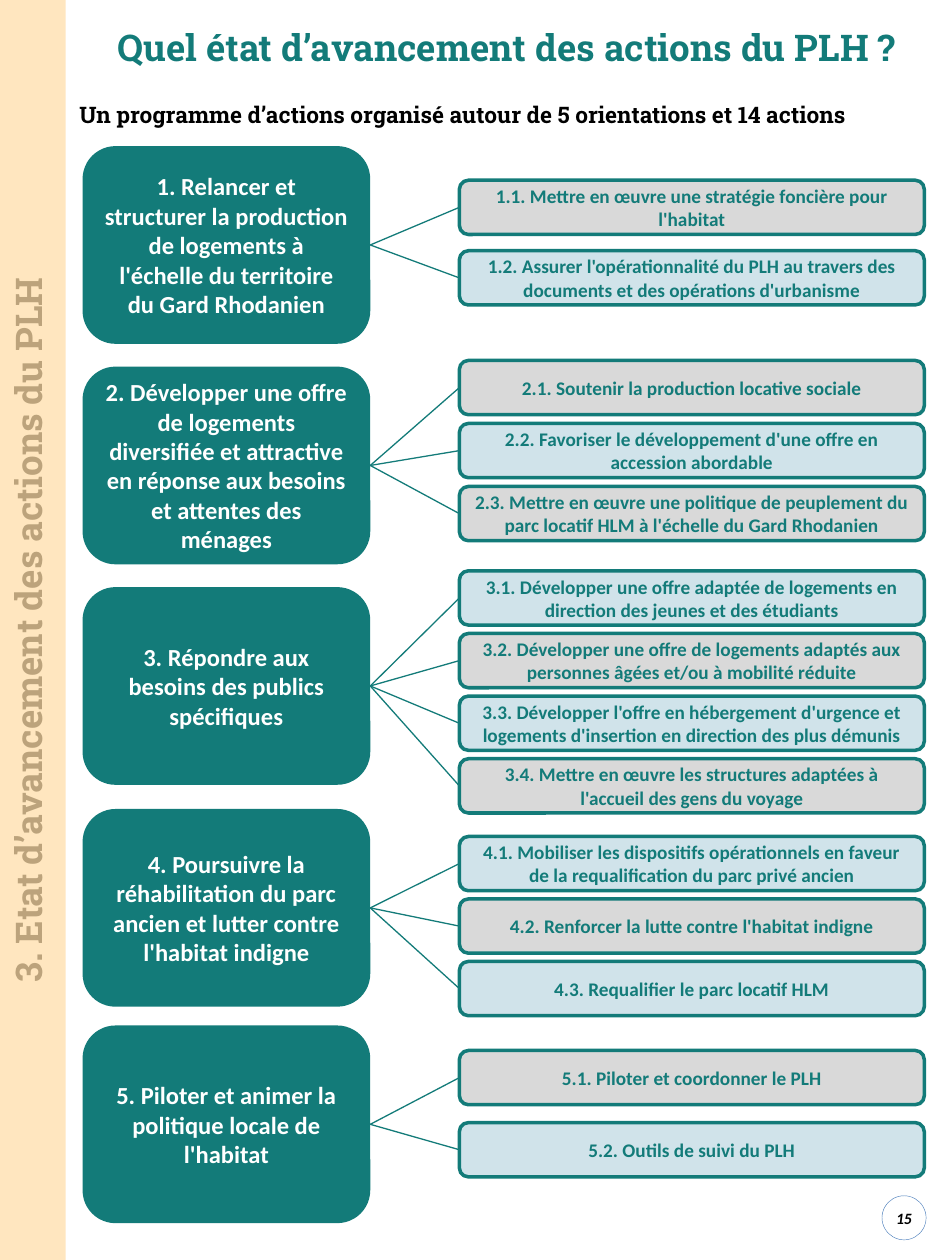
from pptx import Presentation
from pptx.dml.color import RGBColor
from pptx.enum.shapes import MSO_CONNECTOR, MSO_SHAPE
from pptx.enum.text import MSO_ANCHOR, MSO_AUTO_SIZE, PP_ALIGN
from pptx.oxml.ns import qn
from pptx.util import Pt
from lxml.etree import SubElement

COLORS = {"teal": "137B79", "grey": "D9D9D9", "blue": "D0E3EA", "white": "FFFFFF",
          "black": "000000", "band": "FF9D00", "side": "A6A6A6", "ring": "4F81BD"}
TITLE = "Quel état d’avancement des actions du PLH ?"
SUBTITLE = "Un programme d’actions organisé autour de 5 orientations et 14 actions"
SECTION = "3. Etat d’avancement des actions du PLH"
PAGE = "15"
ORIENTATIONS = [
    {"text": "1. Relancer et structurer la production de logements à l'échelle du territoire du Gard Rhodanien",
     "top": 83.5, "first": 103, "pitch": 40.3, "actions": [
         "1.1. Mettre en œuvre une stratégie foncière pour l'habitat",
         "1.2. Assurer l'opérationnalité du PLH au travers des documents et des opérations d'urbanisme"]},
    {"text": "2. Développer une offre de logements diversifiée et attractive en réponse aux besoins et attentes des ménages",
     "top": 209.5, "first": 206, "pitch": 36, "actions": [
         "2.1. Soutenir la production locative sociale",
         "2.2. Favoriser le développement d'une offre en accession abordable",
         "2.3. Mettre en œuvre une politique de peuplement du parc locatif HLM à l'échelle du Gard Rhodanien"]},
    {"text": "3. Répondre aux besoins des publics spécifiques",
     "top": 335.5, "first": 326.2, "pitch": 35.8, "actions": [
         "3.1. Développer une offre adaptée de logements en direction des jeunes et des étudiants",
         "3.2. Développer une offre de logements adaptés aux personnes âgées et/ou à mobilité réduite",
         "3.3. Développer l'offre en hébergement d'urgence et logements d'insertion en direction des plus démunis",
         "3.4. Mettre en œuvre les structures adaptées à l'accueil des gens du voyage"]},
    {"text": "4. Poursuivre la réhabilitation du parc ancien et lutter contre l'habitat indigne",
     "top": 462.3, "first": 478, "pitch": 35.7, "actions": [
         "4.1. Mobiliser les dispositifs opérationnels en faveur de la requalification du parc privé ancien",
         "4.2. Renforcer la lutte contre l'habitat indigne",
         "4.3. Requalifier le parc locatif HLM"]},
    {"text": "5. Piloter et animer la politique locale de l'habitat",
     "top": 586, "first": 600.3, "pitch": 41.2, "actions": [
         "5.1. Piloter et coordonner le PLH",
         "5.2. Outils de suivi du PLH"]},
]


def rgb(name):
    return RGBColor.from_string(COLORS[name])


def write(sp, text, size, color, font="Calibri", align=PP_ALIGN.CENTER,
          anchor=MSO_ANCHOR.MIDDLE, italic=False):
    tf = sp.text_frame
    tf.word_wrap = True
    tf.auto_size = MSO_AUTO_SIZE.NONE
    tf.vertical_anchor = anchor
    p = tf.paragraphs[0]
    p.alignment = align
    r = p.add_run()
    r.text = text
    r.font.name, r.font.size = font, Pt(size)
    r.font.bold, r.font.italic = True, italic
    r.font.color.rgb = rgb(color)


def add_box(s, kind, box, fill=None, line=None, width=0):
    sp = s.shapes.add_shape(kind, *map(Pt, box))
    sp.shadow.inherit = False
    if fill:
        sp.fill.solid()
        sp.fill.fore_color.rgb = rgb(fill)
    else:
        sp.fill.background()
    if line:
        sp.line.color.rgb = rgb(line)
        sp.line.width = Pt(width)
    else:
        sp.line.fill.background()
    return sp


def link(s, start, end):
    cn = s.shapes.add_connector(MSO_CONNECTOR.STRAIGHT, 0, 0, 0, 0)
    cn.begin_connect(start, 3)
    cn.end_connect(end, 1)
    cn.line.color.rgb = rgb("teal")
    cn.line.width = Pt(0.75)
    SubElement(cn._element.spPr, qn("a:effectLst"))


def main():
    """Build the slide of the five orientations and their actions."""
    prs = Presentation()
    prs.slide_width, prs.slide_height = Pt(540), Pt(720)
    s = prs.slides.add_slide(prs.slide_layouts[5])

    title = s.shapes.title
    title.left, title.top, title.width, title.height = map(Pt, (37.5, 0.7, 504, 52))
    write(title, TITLE, 21, "teal", "Roboto Slab")
    subtitle = s.shapes.add_textbox(*map(Pt, (38.2, 54, 491, 656)))
    write(subtitle, SUBTITLE, 13, "black", "Roboto Slab", PP_ALIGN.JUSTIFY, MSO_ANCHOR.TOP)
    page = add_box(s, MSO_SHAPE.OVAL, (504, 683.3, 25.2, 25.2), line="ring", width=0.25)
    tf = page.text_frame
    tf.margin_left = tf.margin_right = tf.margin_top = tf.margin_bottom = 0
    write(page, PAGE, 9, "black", italic=True)

    count = 0
    for group in ORIENTATIONS:
        head = add_box(s, MSO_SHAPE.ROUNDED_RECTANGLE, (47.2, group["top"], 164.4, 113), "teal")
        write(head, group["text"], 14, "white")
        for i, text in enumerate(group["actions"]):
            top = group["first"] + i * group["pitch"]
            action = add_box(s, MSO_SHAPE.ROUNDED_RECTANGLE, (262.5, top, 265.7, 31),
                             ("grey", "blue")[count % 2], "teal", 2)
            write(action, text, 11, "teal")
            link(s, head, action)
            count += 1

    section = s.shapes.add_textbox(*map(Pt, (-341.3, 341.3, 720, 37.4)))
    section.rotation = 270
    write(section, SECTION, 21, "side", "Roboto Slab", anchor=MSO_ANCHOR.TOP)
    band = add_box(s, MSO_SHAPE.RECTANGLE, (0, 0, 37.5, 720), "band")
    color = band._element.spPr.find(qn("a:solidFill")).find(qn("a:srgbClr"))
    SubElement(color, qn("a:alpha"), val="25000")

    prs.save("out.pptx")


if __name__ == "__main__":
    main()
